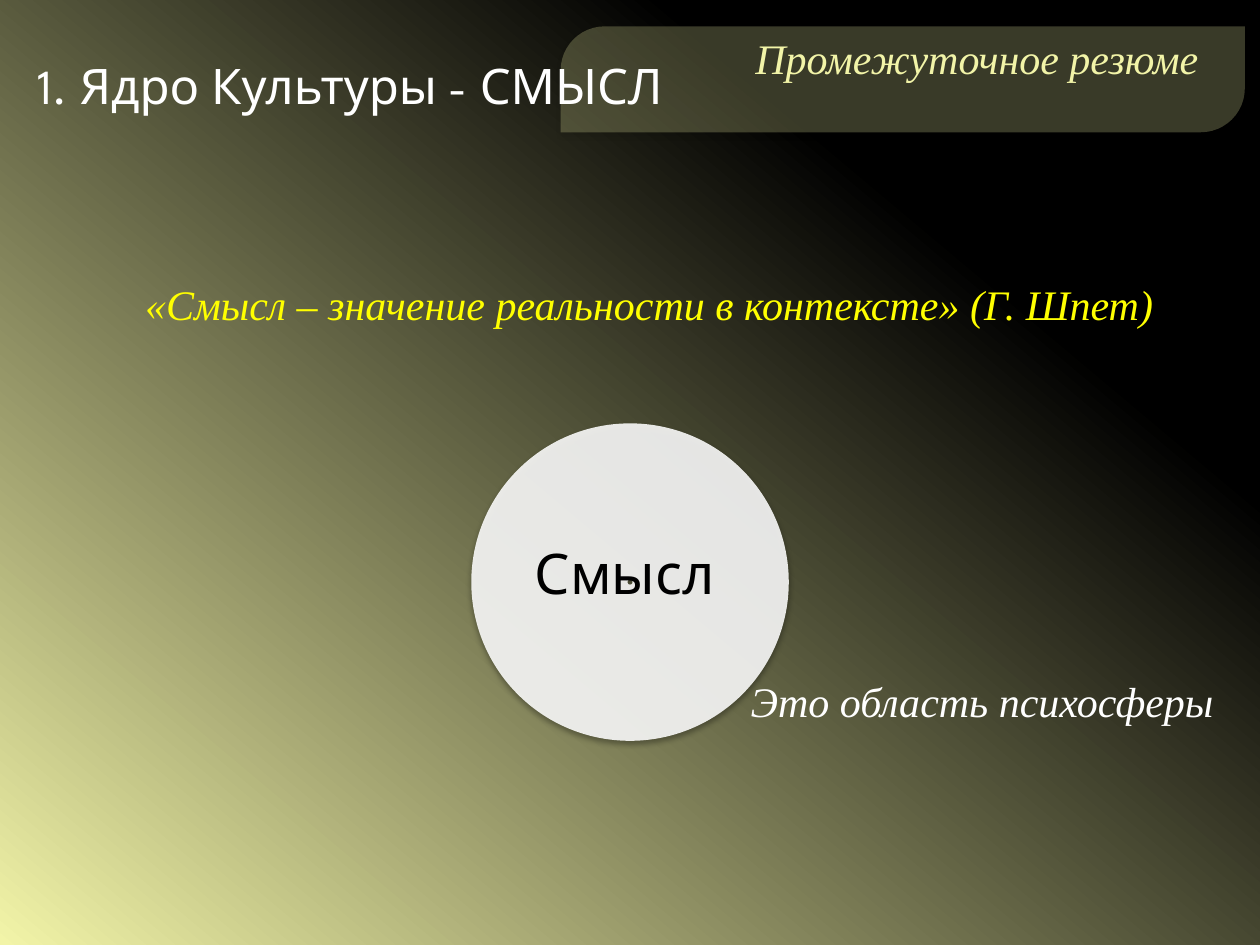
from lxml.etree import SubElement
from pptx import Presentation
from pptx.dml.color import RGBColor
from pptx.enum.shapes import MSO_SHAPE
from pptx.enum.text import MSO_ANCHOR, MSO_AUTO_SIZE, PP_ALIGN
from pptx.oxml.ns import qn
from pptx.util import Inches, Pt

COLORS = {
    "cream": "F2F4A8",
    "black": "000000",
    "white": "FFFFFF",
    "yellow": "FFFF00",
}
HEADING_FONT = "League Spartan"
BODY_FONT = "Times New Roman"


def rgb(name):
    return RGBColor.from_string(COLORS[name])


def add_shadow(effects, blur, distance, angle, opacity):
    """Put an outer shadow into an effect list."""
    shadow = SubElement(
        effects, qn("a:outerShdw"),
        blurRad=str(Pt(blur)), dist=str(Pt(distance)),
        dir=str(angle * 60000), algn="ctr", rotWithShape="0")
    color = SubElement(shadow, qn("a:srgbClr"), val=COLORS["black"])
    SubElement(color, qn("a:alpha"), val=str(opacity * 1000))


def add_panel(shapes, kind, box, color, opacity, adjustments):
    """Add a translucent, borderless shape with a soft shadow."""
    panel = shapes.add_shape(kind, *map(Inches, box))
    for index, value in enumerate(adjustments):
        panel.adjustments[index] = value
    panel.fill.solid()
    panel.fill.fore_color.rgb = rgb(color)
    panel.line.fill.background()
    fill_color = panel.element.spPr.find(qn("a:solidFill"))[0]
    SubElement(fill_color, qn("a:alpha"), val=str(opacity * 1000))
    panel.shadow.inherit = False
    add_shadow(panel.element.spPr.find(qn("a:effectLst")), 3.1, 1.8, 90, 35)


def write_text(holder, text, size, font, color, align,
               anchor=MSO_ANCHOR.MIDDLE, italic=False, shadow=False):
    """Write one formatted line into a text box or placeholder."""
    frame = holder.text_frame
    frame.word_wrap = True
    frame.auto_size = MSO_AUTO_SIZE.NONE
    frame.vertical_anchor = anchor
    paragraph = frame.paragraphs[0]
    paragraph.alignment = align
    run = paragraph.add_run()
    run.text = text
    run.font.size = Pt(size)
    run.font.italic = italic
    run.font.color.rgb = rgb(color)
    if shadow:
        properties = run.font.fill._xPr
        add_shadow(SubElement(properties, qn("a:effectLst")), 3, 3, 45, 50)
    run.font.name = font
    return paragraph


def add_text(shapes, box, *args, **style):
    return write_text(shapes.add_textbox(*map(Inches, box)), *args, **style)


def paint_background(slide):
    fill = slide.background.fill
    fill.gradient()
    fill.gradient_angle = 230
    stops = ((0.25, "black"), (1, "cream"))
    for stop, (position, color) in zip(fill.gradient_stops, stops):
        stop.position = position
        stop.color.rgb = rgb(color)


def add_summary_tab(slide, left, top):
    tab = slide.shapes.add_group_shape().shapes
    add_panel(tab, MSO_SHAPE.ROUND_2_DIAG_RECTANGLE,
              (left, top, 5.43, 0.84), "cream", 24, (0.415, 0))
    add_text(tab, (left + 0.75, top, 4.41, 0.94), "Промежуточное резюме",
             24, BODY_FONT, "cream", PP_ALIGN.RIGHT,
             anchor=MSO_ANCHOR.TOP, italic=True)


def place_title(slide, box):
    title = slide.shapes.title
    title.left, title.top, title.width, title.height = map(Inches, box)
    write_text(title, "1. Ядро Культуры - СМЫСЛ", 28, HEADING_FONT, "white",
               PP_ALIGN.LEFT, shadow=True)
    # Bring the title in front of the summary tab
    title.element.getparent().append(title.element)


def add_core(slide, left, top, diameter):
    add_panel(slide.shapes, MSO_SHAPE.DONUT, (left, top, diameter, diameter),
              "white", 88, (0.492,))
    label = add_text(slide.shapes, (left - 0.08, top + 0.86, 2.6, 0.64),
                     "Смысл", 32, HEADING_FONT, "black", PP_ALIGN.CENTER)
    label.space_after = Pt(12)


def add_remark(slide, box, text, color):
    add_text(slide.shapes, box, text, 24, BODY_FONT, color, PP_ALIGN.RIGHT,
             italic=True, shadow=True)


def main():
    presentation = Presentation()
    presentation.slide_width = Inches(10)
    presentation.slide_height = Inches(7.5)
    slide = presentation.slides.add_slide(presentation.slide_layouts[5])

    paint_background(slide)
    # Header
    add_summary_tab(slide, 4.45, 0.21)
    place_title(slide, (0.2, 0.04, 8.19, 1.26))
    # Core of culture and the remarks around it
    add_core(slide, 3.74, 3.36, 2.52)
    add_remark(slide, (1.54, 4.93, 8.19, 1.26),
               "Это область психосферы", "white")
    add_remark(slide, (0.43, 1.78, 8.82, 1.26),
               "«Смысл – значение реальности в контексте» (Г. Шпет)", "yellow")

    presentation.save("out.pptx")


if __name__ == "__main__":
    main()
